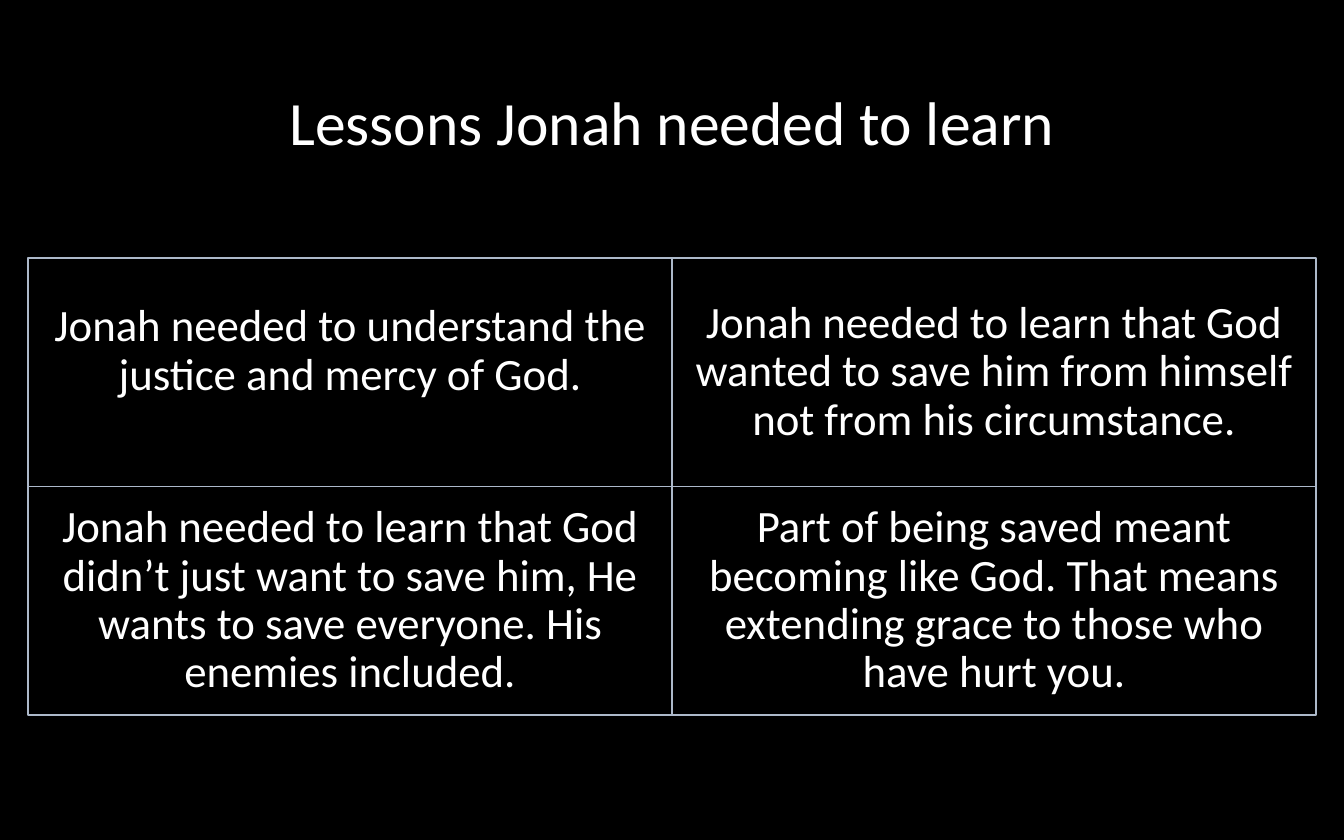
from pptx import Presentation
from pptx.dml.color import RGBColor
from pptx.enum.shapes import MSO_SHAPE
from pptx.enum.text import MSO_ANCHOR, PP_ALIGN
from pptx.util import Cm, Pt

RECTANGLE = MSO_SHAPE.RECTANGLE
MIDDLE = MSO_ANCHOR.MIDDLE
CENTER = PP_ALIGN.CENTER

BLACK = RGBColor(0x00, 0x00, 0x00)
WHITE = RGBColor(0xFF, 0xFF, 0xFF)
PALE_BLUE = RGBColor(0xAD, 0xB9, 0xCA)

LEFT, TOP = 0.53, 4.88
CELL_WIDTH, CELL_HEIGHT = 12.17, 4.32
COLUMNS = 2

# Each lesson with the bottom inset (cm) that sets its height in the cell
LESSONS = [
    ("Jonah needed to understand the justice and mercy of God.", 0.92),
    ("Jonah needed to learn that God wanted to save him from himself "
     "not from his circumstance.", 0.13),
    ("Jonah needed to learn that God didn’t just want to save him, "
     "He wants to save everyone. His enemies included.", 0.13),
    ("Part of being saved meant becoming like God. That means extending "
     "grace to those who have hurt you.", 0.13),
]


def write_text(box, text, *, size, space_before=0, bottom_inset=0.13):
    frame = box.text_frame
    frame.word_wrap = True
    frame.vertical_anchor = MIDDLE
    frame.margin_bottom = Cm(bottom_inset)
    para = frame.paragraphs[0]
    para.alignment = CENTER
    para.line_spacing = 0.9
    para.space_before = Pt(space_before)
    span = para.add_run()
    span.text = text
    span.font.name = "Calibri"
    span.font.size = Pt(size)
    span.font.color.rgb = WHITE


deck = Presentation()
deck.slide_width = Cm(25.4)
deck.slide_height = Cm(15.88)
page = deck.slides.add_slide(deck.slide_layouts[6])
page.background.fill.solid()
page.background.fill.fore_color.rgb = BLACK

title = page.shapes.add_textbox(Cm(1.75), Cm(0.84), Cm(21.9), Cm(3.07))
write_text(title, "Lessons Jonah needed to learn", size=33)

for index, (lesson, bottom_inset) in enumerate(LESSONS):
    row, column = divmod(index, COLUMNS)
    cell = page.shapes.add_shape(
        RECTANGLE,
        Cm(LEFT + column * CELL_WIDTH), Cm(TOP + row * CELL_HEIGHT),
        Cm(CELL_WIDTH), Cm(CELL_HEIGHT),
    )
    cell.shadow.inherit = False
    cell.fill.background()
    cell.line.color.rgb = PALE_BLUE
    cell.line.width = Pt(0.75)
    write_text(cell, lesson, size=24, space_before=7.5, bottom_inset=bottom_inset)

deck.save("out.pptx")
